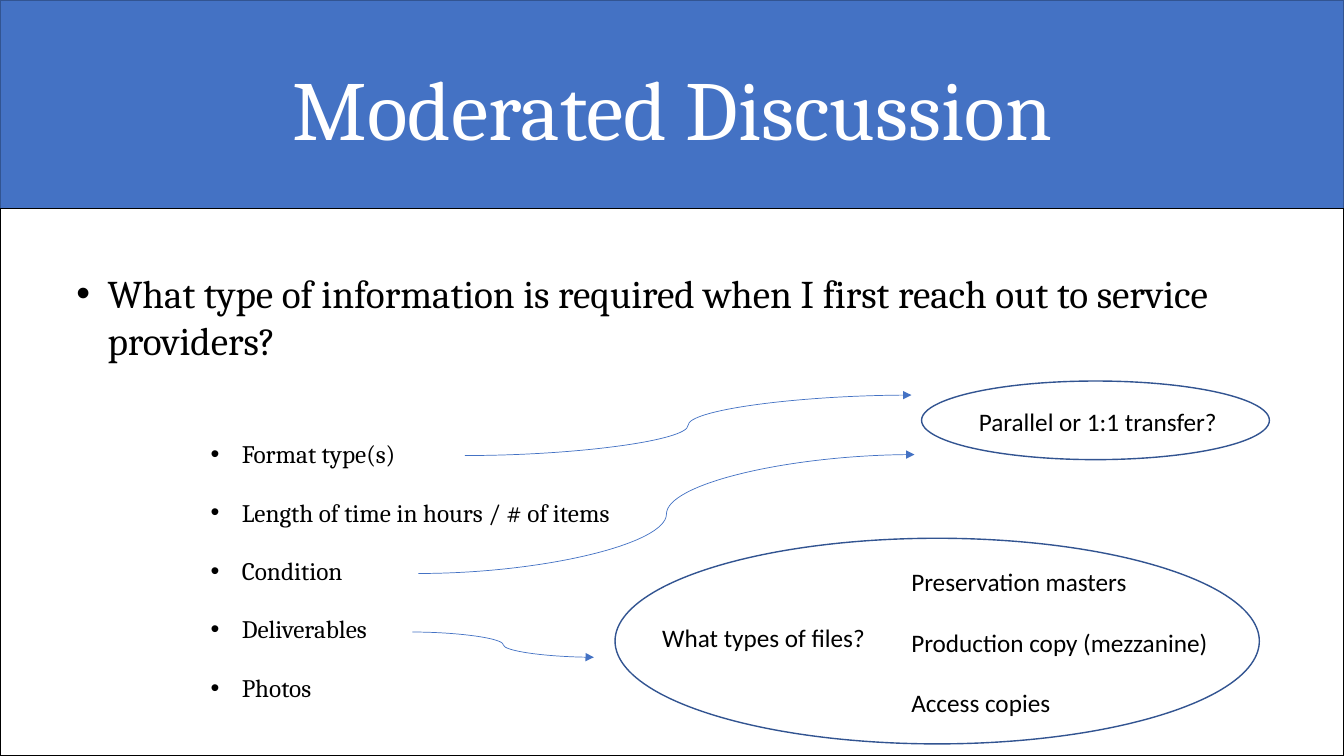
import pptx
import pptx.dml.color
import pptx.enum.shapes
import pptx.enum.text
import pptx.oxml.ns
import pptx.util
from lxml import etree
from pptx.util import Inches

BLUE, NAVY, BLACK, WHITE = "4472C4", "325491", "000000", "FFFFFF"
SERIF, SANS = "Cambria", "Calibri"
SHAPE = pptx.enum.shapes.MSO_SHAPE


def rgb(value):
    return pptx.dml.color.RGBColor.from_string(value)


def sub(parent, tag, **attrs):
    return etree.SubElement(parent, pptx.oxml.ns.qn(tag), attrs)


class Slide:
    def __init__(self, prs):
        self.s = prs.slides.add_slide(prs.slide_layouts[5])

    def font(self, p, size, name, color):
        p.font.size = pptx.util.Pt(size)
        p.font.name = name
        p.font.color.rgb = rgb(color)

    def title(self, text, x, y, w, h):
        sp = self.s.shapes.title
        # Bring the title in front of the banner
        sp.element.getparent().append(sp.element)
        sp.left, sp.top, sp.width, sp.height = map(Inches, (x, y, w, h))
        tf = sp.text_frame
        tf.text = text
        tf.vertical_anchor = pptx.enum.text.MSO_ANCHOR.MIDDLE
        p = tf.paragraphs[0]
        p.alignment = pptx.enum.text.PP_ALIGN.CENTER
        p.line_spacing = 0.9
        self.font(p, 60, SERIF, WHITE)

    def shape(self, kind, x, y, w, h, line, fill=None):
        sp = self.s.shapes.add_shape(kind, *map(Inches, (x, y, w, h)))
        sp.shadow.inherit = False
        if fill:
            sp.fill.solid()
            sp.fill.fore_color.rgb = rgb(fill)
        else:
            sp.fill.background()
        sp.line.color.rgb = rgb(line)
        sp.line.width = pptx.util.Pt(1)

    def text(self, text, x, y, w, h=0.4, size=18, name=SANS, bullet=False, wrap=False):
        tf = self.s.shapes.add_textbox(*map(Inches, (x, y, w, h))).text_frame
        tf.word_wrap = wrap
        tf.auto_size = pptx.enum.text.MSO_AUTO_SIZE.SHAPE_TO_FIT_TEXT
        p = tf.paragraphs[0]
        p.text = text
        self.font(p, size, name, BLACK)
        if bullet:
            pPr = p._p.get_or_add_pPr()
            indent = Inches(0.31)
            pPr.set("marL", str(indent))
            pPr.set("indent", str(-indent))
            bu_font = sub(pPr, "a:buFont", typeface="Arial")
            bu_char = sub(pPr, "a:buChar", char="•")
            # Bullet settings come before the default run properties
            pPr.insert(0, bu_char)
            pPr.insert(0, bu_font)

    def curved_arrow(self, x1, y1, x2, y2):
        c = self.s.shapes.add_connector(
            pptx.enum.shapes.MSO_CONNECTOR.CURVE, *map(Inches, (x1, y1, x2, y2)))
        c.line.color.rgb = rgb(BLUE)
        c.line.width = pptx.util.Pt(0.5)
        sub(c.line._get_or_add_ln(), "a:tailEnd", type="triangle")
        sub(c.element.spPr, "a:effectLst")


def main():
    prs = pptx.Presentation()
    prs.slide_width, prs.slide_height = Inches(13.33), Inches(7.5)
    slide = Slide(prs)

    # Banner, title and body panel
    slide.shape(SHAPE.RECTANGLE, 0, 0, 13.33, 2.07, NAVY, BLUE)
    slide.title("Moderated Discussion", 0.92, 0.4, 11.5, 1.45)
    slide.shape(SHAPE.RECTANGLE, 0, 2.07, 13.33, 5.43, BLACK, WHITE)

    # Information items
    items = [("Format type(s)", 2.16), ("Length of time in hours / # of items", 4.43),
             ("Condition", 1.65), ("Deliverables", 1.91), ("Photos", 1.28)]
    for i, (item, width) in enumerate(items):
        slide.text(item, 1.99, 4.3 + 0.58 * i, width, name=SERIF, bullet=True)

    # Question
    slide.text("What type of information is required when I first reach out to "
               "service providers?", 0.66, 2.62, 12.2, 1.04, 28, SERIF,
               bullet=True, wrap=True)

    # Transfer bubble
    slide.text("Parallel or 1:1 transfer?", 9.61, 3.98, 2.59)
    slide.shape(SHAPE.OVAL, 9.14, 3.78, 3.45, 0.78, NAVY)

    # File types bubble
    slide.text("What types of files?", 6.47, 6.12, 2.24)
    files = [("Preservation masters", 2.36), ("Production copy (mezzanine)", 3.18),
             ("Access copies", 1.6)]
    for i, (label, width) in enumerate(files):
        slide.text(label, 8.94, 5.57 + 0.6 * i, width)
    slide.shape(SHAPE.OVAL, 6.1, 5.34, 6.39, 2.04, NAVY)

    # Arrows from items to bubbles
    for ends in [(4.61, 4.52, 9.04, 3.92), (4.15, 5.69, 9.07, 4.51),
                 (4.09, 6.27, 5.89, 6.52)]:
        slide.curved_arrow(*ends)

    prs.save("out.pptx")


if __name__ == "__main__":
    main()
